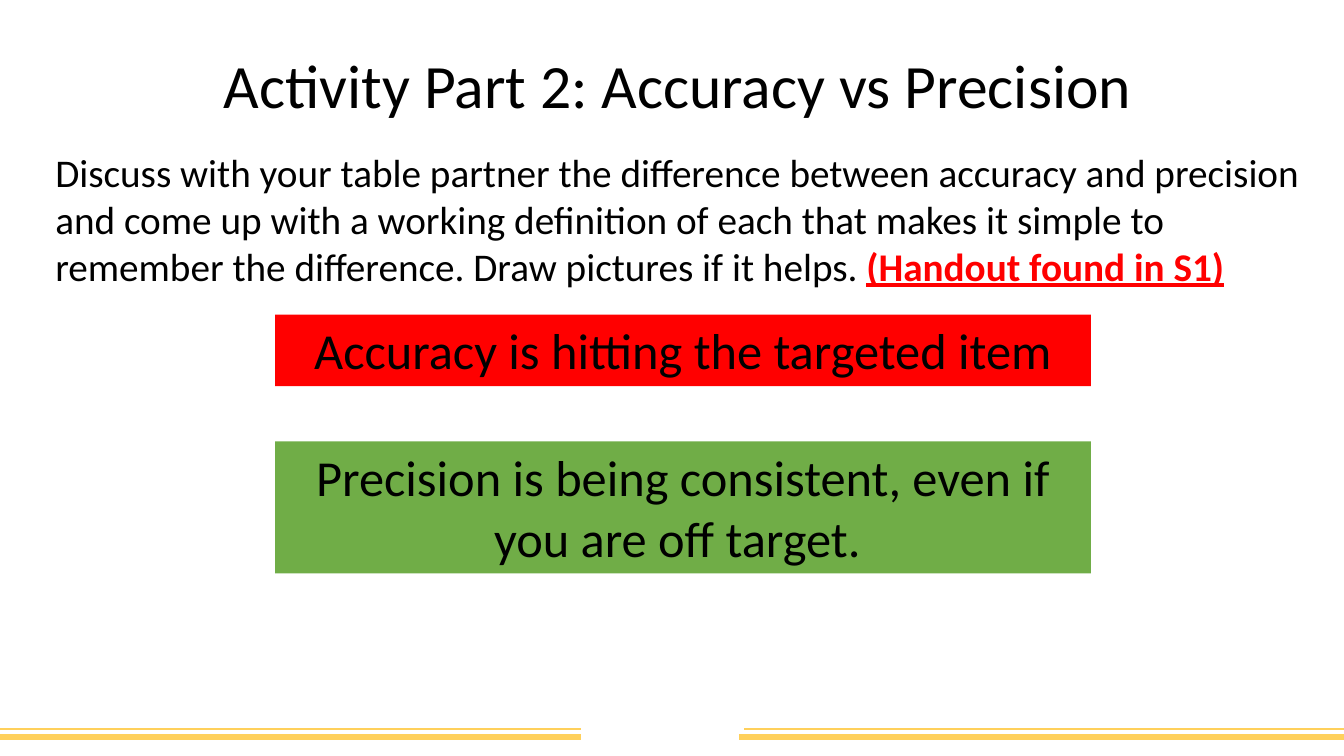
from dataclasses import dataclass

from lxml import etree
from pptx import Presentation
from pptx.dml.color import RGBColor
from pptx.enum.shapes import MSO_CONNECTOR, MSO_SHAPE
from pptx.enum.text import MSO_ANCHOR, PP_ALIGN
from pptx.oxml.ns import qn
from pptx.util import Emu, Pt

LINE = MSO_CONNECTOR.STRAIGHT
RECT = MSO_SHAPE.RECTANGLE
TOP = MSO_ANCHOR.TOP
LEFT, CENTER = PP_ALIGN.LEFT, PP_ALIGN.CENTER
SCALE = 9144


@dataclass(frozen=True)
class Theme:
    face: str = "Calibri"
    ink: str = "000000"
    red: str = "FF0000"
    green: str = "70AD47"
    gold: str = "FFD05B"
    title: int = 44
    body: int = 28
    card: int = 36
    thin: float = 1.5
    thick: float = 4.5


THEME = Theme()


def px(*sizes):
    return [Emu(size * SCALE) for size in sizes]


def color(code):
    return RGBColor.from_string(code)


def style(font, size, code=THEME.ink):
    font.name = THEME.face
    font.size = Pt(size)
    font.color.rgb = color(code)


def write(shape, text, size, align, wrap=True):
    frame = shape.text_frame
    frame.word_wrap = wrap
    frame.vertical_anchor = TOP
    para = frame.paragraphs[0]
    para.alignment = align
    para.add_run().text = text
    style(para.font, size)
    return para


def add_title(slide, box, text):
    title = slide.shapes.title
    title.left, title.top, title.width, title.height = px(*box)
    para = write(title, text, THEME.title, LEFT, False)
    para.line_spacing = 1.0


def add_task(slide, box, text, note):
    task = slide.shapes.add_textbox(*px(*box))
    para = write(task, text, THEME.body, LEFT)
    run = para.add_run()
    run.text = note
    style(run.font, THEME.body, THEME.red)
    run.font.bold = True
    run.font.underline = True


def add_card(slide, box, text, fill):
    card = slide.shapes.add_shape(RECT, *px(*box))
    card.shadow.inherit = False
    card.fill.solid()
    card.fill.fore_color.rgb = color(fill)
    card.line.fill.background()
    write(card, text, THEME.card, CENTER)


def add_rules(slide, box):
    left, top, width, height = box
    right, low = left + width, top + height
    rules = [
        (left, left + 577, low, THEME.thick),
        (right - 600, right, low, THEME.thick),
        (left, left + 577, top, THEME.thin),
        (right - 595, right, top, THEME.thin),
    ]
    for start, end, level, weight in rules:
        rule = slide.shapes.add_connector(LINE, *px(start, level, end, level))
        rule.line.color.rgb = color(THEME.gold)
        rule.line.width = Pt(weight)
        etree.SubElement(rule._element.spPr, qn("a:effectLst"))


def main():
    deck = Presentation()
    deck.slide_width, deck.slide_height = px(1333, 750)
    slide = deck.slides.add_slide(deck.slide_layouts[5])
    add_rules(slide, (-1, 723, 1334, 8))
    add_title(slide, (212, 42, 931, 84), "Activity Part 2: Accuracy vs Precision")
    add_task(
        slide,
        (45, 142, 1268, 151),
        "Discuss with your table partner the difference between accuracy and "
        "precision and come up with a working definition of each that makes it "
        "simple to remember the difference. Draw pictures if it helps. ",
        "(Handout found in S1)",
    )
    cards = [
        (312, 71, "Accuracy is hitting the targeted item", THEME.red),
        (438, 131, "Precision is being consistent, even if you are off target. ",
         THEME.green),
    ]
    for top, height, text, fill in cards:
        add_card(slide, (273, top, 809, height), text, fill)
    deck.save("out.pptx")


if __name__ == "__main__":
    main()
